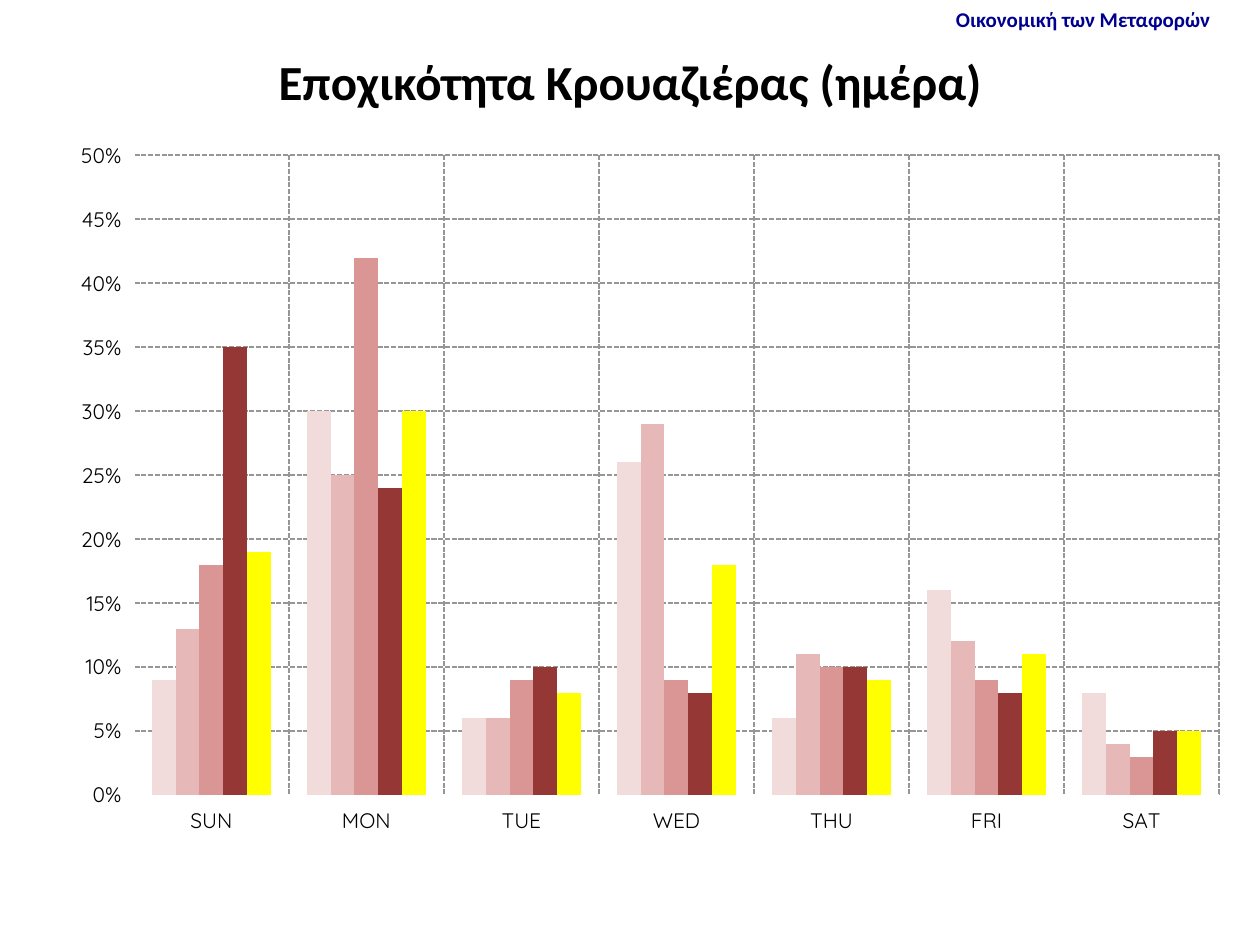
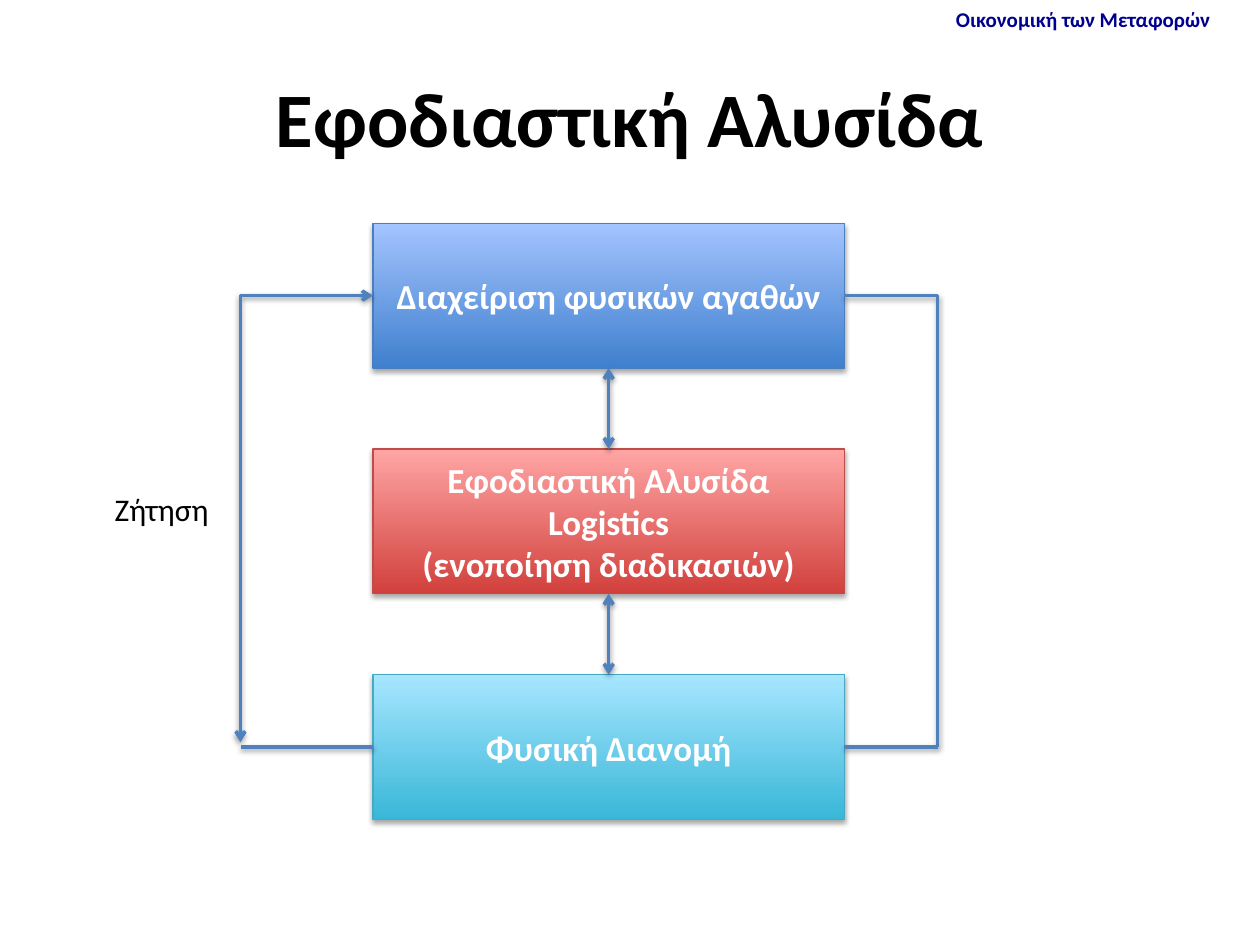
from dataclasses import dataclass

from lxml import etree
from pptx import Presentation
from pptx.chart.data import CategoryChartData
from pptx.dml.color import RGBColor
from pptx.enum.chart import XL_CHART_TYPE, XL_TICK_MARK
from pptx.enum.dml import MSO_LINE
from pptx.enum.shapes import MSO_CONNECTOR, MSO_SHAPE
from pptx.enum.text import MSO_ANCHOR, PP_ALIGN
from pptx.oxml.ns import qn
from pptx.util import Cm, Pt

COLUMNS = XL_CHART_TYPE.COLUMN_CLUSTERED
TICK_OUT = XL_TICK_MARK.OUTSIDE
TICK_NONE = XL_TICK_MARK.NONE
SHORT_DASH = MSO_LINE.SQUARE_DOT
STRAIGHT = MSO_CONNECTOR.STRAIGHT
ELBOW = MSO_CONNECTOR.ELBOW
RECTANGLE = MSO_SHAPE.RECTANGLE
TOP = MSO_ANCHOR.TOP
MIDDLE = MSO_ANCHOR.MIDDLE
LEFT = PP_ALIGN.LEFT
CENTER = PP_ALIGN.CENTER


@dataclass(frozen=True)
class Theme:
    font: str = "Calibri"
    chart_font: str = "Quicksand"
    text: str = "000000"
    light: str = "FFFFFF"
    header: str = "000090"
    grid: str = "969696"
    link: str = "4F81BD"
    blue: tuple = ("3F80CE", "A4C4FF", "4B7EBC")
    red: tuple = ("D1403C", "FFA6A5", "BF4C48")
    cyan: tuple = ("39B7D8", "A7E6FF", "46AAC5")
    series: tuple = ("F2DCDB", "E6B9B8", "D99694", "953735", "FFFF00")
    small_size: int = 12
    label_size: int = 18
    box_size: int = 20
    chart_title_size: int = 28
    title_size: int = 44
    grid_width: float = 0.96
    link_width: float = 2


def rgb(code):
    return RGBColor.from_string(code)


class SlideMaker:
    def __init__(self, deck, theme):
        self.deck = deck
        self.theme = theme
        self.page = None

    def start_page(self, title, size, title_height):
        self.page = self.deck.slides.add_slide(self.deck.slide_layouts[6])
        self.text("Οικονομική των Μεταφορών", (19.02, 0, 5.72, 0.76),
                  self.theme.small_size, self.theme.header, bold=True, wrap=False)
        self.text(title, (1.27, 0.76, 22.86, title_height), size,
                  self.theme.text, bold=True, align=CENTER, anchor=MIDDLE)

    def fill_frame(self, frame, words, size, color, bold, align, anchor):
        frame.text = words
        frame.vertical_anchor = anchor
        for para in frame.paragraphs:
            para.alignment = align
            for span in para.runs:
                span.font.name = self.theme.font
                span.font.size = Pt(size)
                span.font.bold = bold
                span.font.color.rgb = rgb(color)

    def text(self, words, place, size, color, bold=False, align=LEFT,
             anchor=TOP, wrap=True):
        box = self.page.shapes.add_textbox(*map(Cm, place))
        box.text_frame.word_wrap = wrap
        self.fill_frame(box.text_frame, words, size, color, bold, align, anchor)

    def shadow(self, shape, distance, opacity):
        properties = shape.element.spPr
        effects = properties.find(qn("a:effectLst"))
        if effects is None:
            effects = etree.SubElement(properties, qn("a:effectLst"))
        outer = etree.SubElement(
            effects, qn("a:outerShdw"), blurRad=str(Pt(3.1)),
            dist=str(Pt(distance)), dir="5400000", rotWithShape="0")
        black = etree.SubElement(outer, qn("a:srgbClr"), val="000000")
        etree.SubElement(black, qn("a:alpha"), val=str(opacity * 1000))

    def box(self, words, place, colors):
        dark, pale, edge = colors
        box = self.page.shapes.add_shape(RECTANGLE, *map(Cm, place))
        box.fill.gradient()
        box.fill.gradient_angle = 90
        for stop, color in zip(box.fill.gradient_stops, (dark, pale)):
            stop.color.rgb = rgb(color)
        box.line.color.rgb = rgb(edge)
        box.line.width = Pt(0.75)
        box.shadow.inherit = False
        self.shadow(box, 1.8, 35)
        box.text_frame.word_wrap = True
        self.fill_frame(box.text_frame, words, self.theme.box_size,
                        self.theme.light, True, CENTER, MIDDLE)

    def link(self, start, end, arrows=False, bent=False):
        link = self.page.shapes.add_connector(
            ELBOW if bent else STRAIGHT, *map(Cm, start + end))
        if bent:
            geometry = link.element.spPr.find(qn("a:prstGeom"))
            geometry.set("prst", "bentConnector2")
        link.line.color.rgb = rgb(self.theme.link)
        link.line.width = Pt(self.theme.link_width)
        if arrows:
            line = link.element.spPr.find(qn("a:ln"))
            for tip in ("a:headEnd", "a:tailEnd"):
                etree.SubElement(line, qn(tip), type="arrow")
        self.shadow(link, 1.6, 38)

    def column_chart(self, categories, series, place, plot_area):
        data = CategoryChartData(number_format="0%")
        data.categories = categories
        for number, values in enumerate(series, 1):
            data.add_series(f"Series {number}", values)
        chart = self.page.shapes.add_chart(COLUMNS, *map(Cm, place), data).chart
        chart.has_legend = False
        chart.has_title = False
        chart.font.name = self.theme.chart_font
        chart.font.size = Pt(self.theme.small_size)
        chart.font.color.rgb = rgb(self.theme.text)

        plot = chart.plots[0]
        plot.gap_width = 150
        plot.overlap = 0
        plot.vary_by_categories = False
        for column, color in zip(plot.series, self.theme.series):
            column.format.fill.solid()
            column.format.fill.fore_color.rgb = rgb(color)
            column.invert_if_negative = False

        for axis in (chart.category_axis, chart.value_axis):
            self.style_axis(axis)
        chart.value_axis.minimum_scale = 0
        chart.value_axis.maximum_scale = 0.5
        chart.value_axis.major_unit = 0.05
        chart.value_axis.tick_labels.number_format = "0%"
        chart.value_axis.tick_labels.number_format_is_linked = False
        self.place_plot(chart, plot_area)

    def style_axis(self, axis):
        axis.major_tick_mark = TICK_OUT
        axis.minor_tick_mark = TICK_NONE
        axis.has_major_gridlines = True
        grid = axis.major_gridlines.format.line
        for line, color in ((axis.format.line, self.theme.light),
                            (grid, self.theme.grid)):
            line.color.rgb = rgb(color)
            line.width = Pt(self.theme.grid_width)
        grid.dash_style = SHORT_DASH

    def place_plot(self, chart, plot_area):
        area = chart.element.find(".//" + qn("c:plotArea"))
        layout = area.find(qn("c:layout"))
        if layout is None:
            layout = etree.Element(qn("c:layout"))
            area.insert(0, layout)
        manual = etree.SubElement(layout, qn("c:manualLayout"))
        settings = [("layoutTarget", "inner"), ("xMode", "edge"), ("yMode", "edge")]
        settings += zip("xywh", plot_area)
        for name, value in settings:
            etree.SubElement(manual, qn(f"c:{name}"), val=str(value))


def cruise_page(maker):
    maker.start_page("Εποχικότητα Κρουαζιέρας (ημέρα)",
                     maker.theme.chart_title_size, 1.75)
    days = ("SUN", "MON", "TUE", "WED", "THU", "FRI", "SAT")
    shares = (
        (0.09, 0.30, 0.06, 0.26, 0.06, 0.16, 0.08),
        (0.13, 0.25, 0.06, 0.29, 0.11, 0.12, 0.04),
        (0.18, 0.42, 0.09, 0.09, 0.10, 0.09, 0.03),
        (0.35, 0.24, 0.10, 0.08, 0.10, 0.08, 0.05),
        (0.19, 0.30, 0.08, 0.18, 0.09, 0.11, 0.05),
    )
    maker.column_chart(days, shares, (0.51, 2.51, 24.31, 15.54),
                       (0.09, 0.04, 0.9, 0.83))


def supply_chain_page(maker):
    theme = maker.theme
    maker.start_page("Eφοδιαστική Αλυσίδα", theme.title_size, 3.18)
    left, top, width, height, step = 7.52, 4.5, 9.5, 2.92, 4.55
    right, center = left + width, left + width / 2
    demand_rail, return_rail = 4.85, 18.9
    stages = (
        ("Διαχείριση φυσικών αγαθών", theme.blue),
        ("Εφοδιαστική Αλυσίδα\nLogistics\n(ενοποίηση διαδικασιών)", theme.red),
        ("Φυσική Διανομή", theme.cyan),
    )
    tops = [top + step * row for row in range(len(stages))]
    for (words, colors), stage_top in zip(stages, tops):
        maker.box(words, (left, stage_top, width, height), colors)
    for upper, lower in zip(tops, tops[1:]):
        maker.link((center, upper + height), (center, lower), arrows=True)

    first, last = tops[0] + height / 2, tops[-1] + height / 2
    maker.link((left, first), (demand_rail, last - 0.1), arrows=True, bent=True)
    maker.link((right, first), (return_rail, last), bent=True)
    maker.link((left, last), (demand_rail, last))
    maker.link((right, last), (return_rail, last))
    maker.text("Ζήτηση", (2.06, 9.75, 2.77, 1.02), theme.label_size, theme.text)


def main():
    deck = Presentation()
    deck.slide_width, deck.slide_height = Cm(25.4), Cm(19.05)
    maker = SlideMaker(deck, Theme())
    cruise_page(maker)
    supply_chain_page(maker)
    deck.save("out.pptx")


if __name__ == "__main__":
    main()
